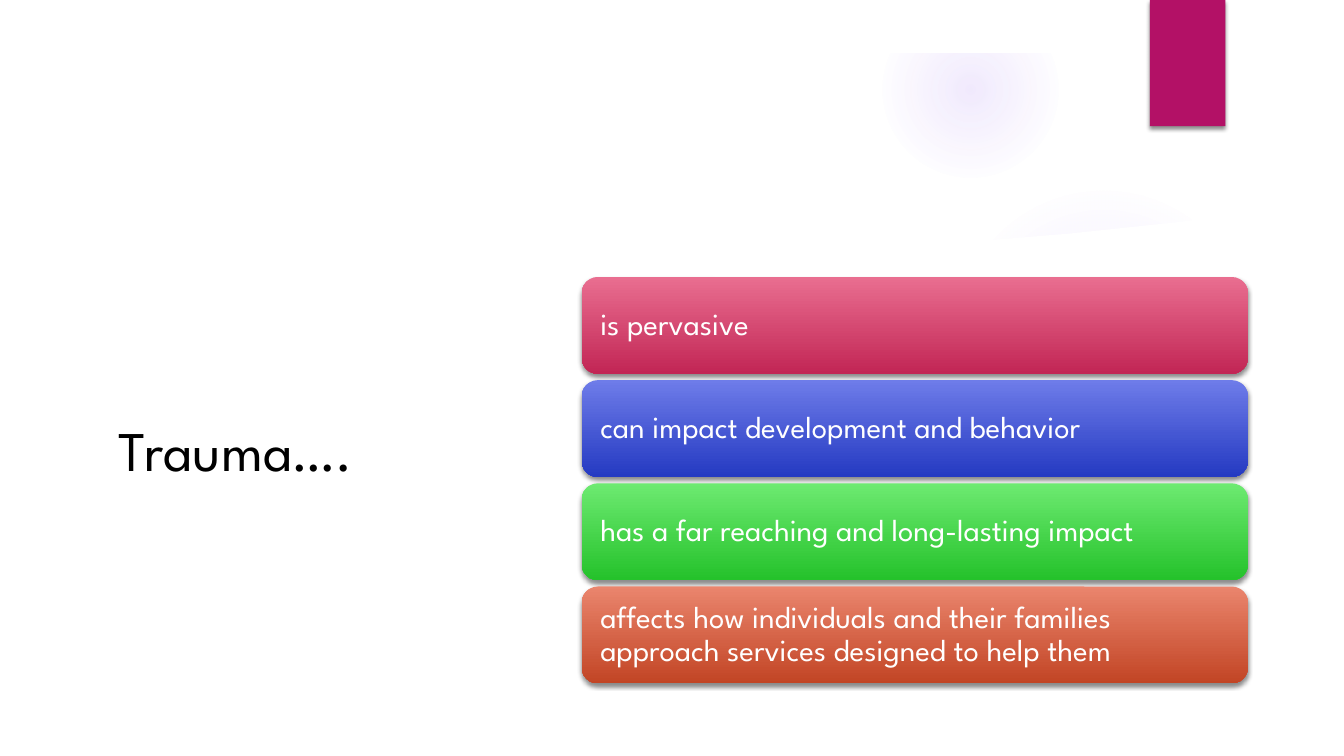
from dataclasses import dataclass

from lxml.etree import SubElement
from pptx import Presentation
from pptx.dml.color import RGBColor
from pptx.enum.shapes import MSO_SHAPE as SHAPE
from pptx.enum.text import MSO_ANCHOR as ANCHOR, PP_ALIGN as ALIGN
from pptx.oxml import parse_xml
from pptx.oxml.ns import nsdecls, qn
from pptx.util import Cm, Pt


@dataclass(frozen=True)
class Theme:
    """Hold the colours, font and type sizes of the slide."""
    font: str = "League Spartan"
    title_size: int = 40
    card_size: int = 22
    ink: str = "000000"
    paper: str = "FFFFFF"
    accent: str = "B31166"
    glow: str = "9B6BF2"
    cards: tuple = (("E96E90", "C22655"), ("6E7CE9", "253AC2"),
                    ("6DEA71", "25C22B"), ("EA856D", "C24525"))


THEME = Theme()
CARD_TEXTS = (
    "is pervasive",
    "can impact development and behavior",
    "has a far reaching and long-lasting impact",
    "affects how individuals and their families approach services designed to help them",
)
PANEL_OUTLINE = (
    (1.27, 5.18), (5.49, 5.69), (11.28, 6.12), (17.98, 6.3), (24.1, 6.12),
    (26.92, 5.89), (29.77, 5.59), (32.61, 5.18), (32.61, 17.78), (1.27, 17.78),
)


def rgb(color):
    """Turn a hex string into a colour."""
    return RGBColor.from_string(color)


def paint(sp, color):
    """Give a shape a plain fill without line or shadow."""
    sp.fill.solid()
    sp.fill.fore_color.rgb = rgb(color)
    sp.line.fill.background()
    sp.shadow.inherit = False


def add_plain(slide, kind, left, top, width, height, color):
    """Add a preset shape with a plain fill."""
    sp = slide.shapes.add_shape(kind, Cm(left), Cm(top), Cm(width), Cm(height))
    paint(sp, color)
    return sp


def add_shadow(sp):
    """Drop a soft shadow below a shape."""
    effects = sp._element.spPr.find(qn("a:effectLst"))
    shadow = SubElement(effects, qn("a:outerShdw"), blurRad=str(Pt(3)),
                        dist=str(Pt(2)), dir="5400000", rotWithShape="0")
    color = SubElement(shadow, qn("a:srgbClr"), val=THEME.ink)
    SubElement(color, qn("a:alpha"), val="45000")


def add_glow(slide, left, top, size, stops):
    """Add a circle that fades outwards through (position, opacity) stops."""
    sp = add_plain(slide, SHAPE.OVAL, left, top, size, size, THEME.glow)
    marks = "".join(
        f'<a:gs pos="{pos * 1000}"><a:srgbClr val="{THEME.glow}">'
        f'<a:alpha val="{alpha * 1000}"/></a:srgbClr></a:gs>'
        for pos, alpha in stops)
    gradient = parse_xml(
        f'<a:gradFill {nsdecls("a")}><a:gsLst>{marks}</a:gsLst><a:path path="circle">'
        '<a:fillToRect l="50000" t="50000" r="50000" b="50000"/></a:path></a:gradFill>')
    spPr = sp._element.spPr
    spPr.replace(spPr.find(qn("a:solidFill")), gradient)


def add_panel(slide):
    """Add the white panel with the sagging top edge."""
    points = [(Cm(x), Cm(y)) for x, y in PANEL_OUTLINE]
    builder = slide.shapes.build_freeform(*points[0])
    builder.add_line_segments(points[1:], close=True)
    paint(builder.convert_to_shape(), THEME.paper)


def write(tf, text, size, color):
    """Write one left-aligned run, centred vertically."""
    tf.word_wrap = True
    tf.vertical_anchor = ANCHOR.MIDDLE
    p = tf.paragraphs[0]
    p.alignment = ALIGN.LEFT
    r = p.add_run()
    r.text = text
    r.font.name = THEME.font
    r.font.size = Pt(size)
    r.font.color.rgb = rgb(color)
    return p


def add_title(slide, text):
    """Add the slide title."""
    box = slide.shapes.add_textbox(Cm(2.74), Cm(6.2), Cm(8.41), Cm(10.21))
    write(box.text_frame, text, THEME.title_size, THEME.ink)


def add_card(slide, top, text, colors):
    """Add a rounded card with a vertical gradient."""
    sp = add_plain(slide, SHAPE.ROUNDED_RECTANGLE, 14.66, top, 16.79, 2.44, colors[0])
    sp.fill.gradient()
    sp.fill.gradient_angle = 270
    for stop, color in zip(sp.fill.gradient_stops, colors):
        stop.color.rgb = rgb(color)
    add_shadow(sp)
    tf = sp.text_frame
    tf.margin_left = tf.margin_right = Cm(0.35)
    p = write(tf, text, THEME.card_size, THEME.paper)
    p.line_spacing = 0.9


def main():
    """Build and save the slide."""
    prs = Presentation()
    prs.slide_width, prs.slide_height = Cm(33.87), Cm(19.05)
    slide = prs.slides.add_slide(prs.slide_layouts[6])
    add_glow(slide, 23.9, 4.65, 7.82, ((0, 7), (36, 6), (69, 0)))
    add_glow(slide, 22.23, 0.03, 4.45, ((0, 14), (36, 7), (73, 0)))
    add_panel(slide)
    frame = add_plain(slide, SHAPE.FRAME, 0, 0, 33.87, 19.05, THEME.paper)
    frame.adjustments[0] = 0.07
    add_shadow(add_plain(slide, SHAPE.RECTANGLE, 28.98, 0, 1.9, 3.18, THEME.accent))
    add_title(slide, "Trauma….")
    for i, (text, colors) in enumerate(zip(CARD_TEXTS, THEME.cards)):
        add_card(slide, 6.98 + 2.6 * i, text, colors)
    prs.save("out.pptx")


if __name__ == "__main__":
    main()
